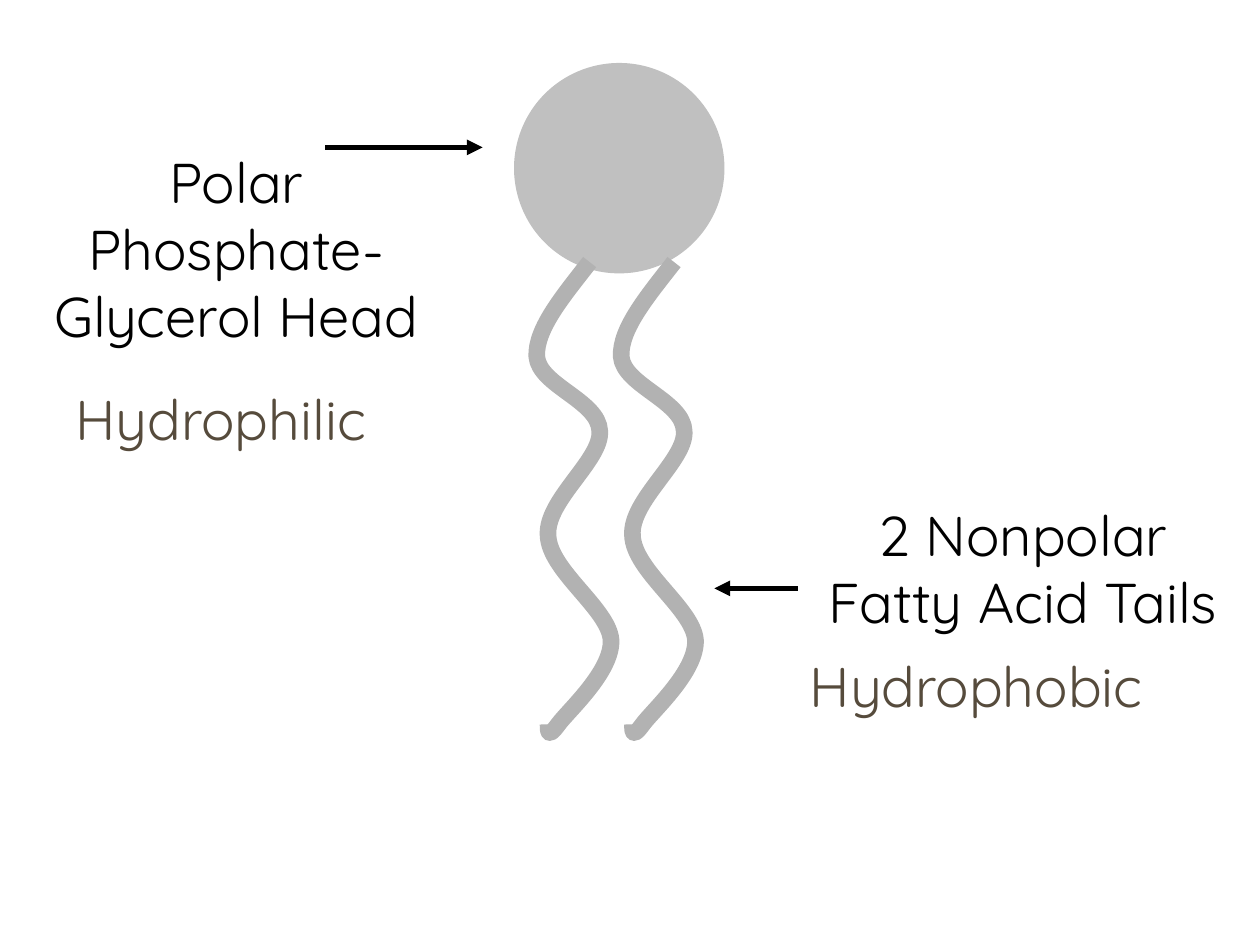
from lxml import etree
from pptx import Presentation
from pptx.dml.color import RGBColor
from pptx.enum import shapes, text
from pptx.oxml.ns import qn
from pptx.util import Inches, Pt

THEME = {
    "font": "Quicksand", "size": 32,
    "panel": "FFFFFF", "label": "000000", "property": "564B3C",
    "head": "C0C0C0", "tail": "B2B2B2", "tail_width": 9.5,
    "arrow": "000000", "arrow_width": 3,
}

# Paragraphs, (left, top, width, height), alignment, colour
HEAD_LABEL = (["Polar Phosphate-", "Glycerol Head"], (0.25, 1.12, 3.25, 1.7), "CENTER", "label")
TAIL_LABEL = (["2 Nonpolar", "Fatty Acid Tails"], (6.33, 3.92, 3.58, 1.17), "CENTER", "label")
TAIL_PROPERTY = (["Hydrophobic"], (6.33, 5.12, 3.33, 0.63), "LEFT", "property")
HEAD_PROPERTY = (["Hydrophilic"], (0.5, 3, 2.92, 0.63), "LEFT", "property")

ARROWS = [(2.58, 1.17, 3.83, 1.17), (6.33, 4.67, 5.67, 4.67)]
PANEL_BOX = (0.1, 0.11, 9.8, 7.29)
PANEL_ROUNDING = 0.017
HEAD_BOX = (4.08, 0.5, 1.67, 1.67)
TAIL_START = (4.68, 2.08)
# Each curve: two control points and an end point
TAIL_CURVES = [
    ((4.47, 2.35), (4.25, 2.61), (4.26, 2.83)),
    ((4.28, 3.06), (4.75, 3.18), (4.76, 3.42)),
    ((4.78, 3.65), (4.33, 3.97), (4.35, 4.25)),
    ((4.36, 4.53), (4.83, 4.83), (4.85, 5.08)),
    ((4.86, 5.33), (4.51, 5.64), (4.43, 5.75)),
    ((4.35, 5.86), (4.35, 5.81), (4.35, 5.75)),
]
TAIL_OFFSETS = [0, 0.67]


def color(name):
    return RGBColor.from_string(THEME[name])


def inches(values):
    return [Inches(value) for value in values]


def style_line(shape, name):
    shape.line.color.rgb = color(name)
    shape.line.width = Pt(THEME[name + "_width"])


def add_filled(container, kind, box, color_name):
    shape = container.shapes.add_shape(kind, *inches(box))
    shape.shadow.inherit = False
    shape.fill.solid()
    shape.fill.fore_color.rgb = color(color_name)
    shape.line.fill.background()
    return shape


def add_label(slide, lines, box, alignment, color_name):
    frame = slide.shapes.add_textbox(*inches(box)).text_frame
    frame.word_wrap = True
    frame.auto_size = text.MSO_AUTO_SIZE.SHAPE_TO_FIT_TEXT
    frame.text = "\n".join(lines)
    for paragraph in frame.paragraphs:
        paragraph.alignment = getattr(text.PP_ALIGN, alignment)
        font = paragraph.runs[0].font
        for name, value in {"name": THEME["font"], "size": Pt(THEME["size"])}.items():
            setattr(font, name, value)
        font.color.rgb = color(color_name)


def add_arrow(slide, ends):
    arrow = slide.shapes.add_connector(shapes.MSO_CONNECTOR.STRAIGHT, *inches(ends))
    style_line(arrow, "arrow")
    etree.SubElement(arrow.line._get_or_add_ln(), qn("a:tailEnd"), type="triangle")
    etree.SubElement(arrow._element.spPr, qn("a:effectLst"))


def bend_segments(freeform):
    """Turn every three line segments into one cubic Bezier curve."""
    outline = next(freeform._element.iter(qn("a:path")))
    segments = outline.findall(qn("a:lnTo"))
    for first in range(0, len(segments), 3):
        curve = etree.SubElement(outline, qn("a:cubicBezTo"))
        for segment in segments[first:first + 3]:
            curve.append(segment[0])
            outline.remove(segment)


def add_tail(group, offset):
    points = [TAIL_START, *(point for curve in TAIL_CURVES for point in curve)]
    start, *others = [inches((x + offset, y)) for x, y in points]
    builder = group.shapes.build_freeform(*start)
    builder.add_line_segments(others, close=False)
    tail = builder.convert_to_shape()
    bend_segments(tail)
    tail.shadow.inherit = False
    tail.fill.background()
    style_line(tail, "tail")


def add_phospholipid(slide):
    group = slide.shapes.add_group_shape()
    add_filled(group, shapes.MSO_SHAPE.OVAL, HEAD_BOX, "head")
    for offset in TAIL_OFFSETS:
        add_tail(group, offset)


def main():
    presentation = Presentation()
    presentation.slide_width, presentation.slide_height = inches((10, 7.5))
    slide = presentation.slides.add_slide(presentation.slide_layouts[6])
    panel = add_filled(slide, shapes.MSO_SHAPE.ROUNDED_RECTANGLE, PANEL_BOX, "panel")
    panel.adjustments[0] = PANEL_ROUNDING
    for label in (HEAD_LABEL, TAIL_LABEL):
        add_label(slide, *label)
    for ends in ARROWS:
        add_arrow(slide, ends)
    add_label(slide, *TAIL_PROPERTY)
    add_phospholipid(slide)
    add_label(slide, *HEAD_PROPERTY)
    presentation.save("out.pptx")


if __name__ == "__main__":
    main()
